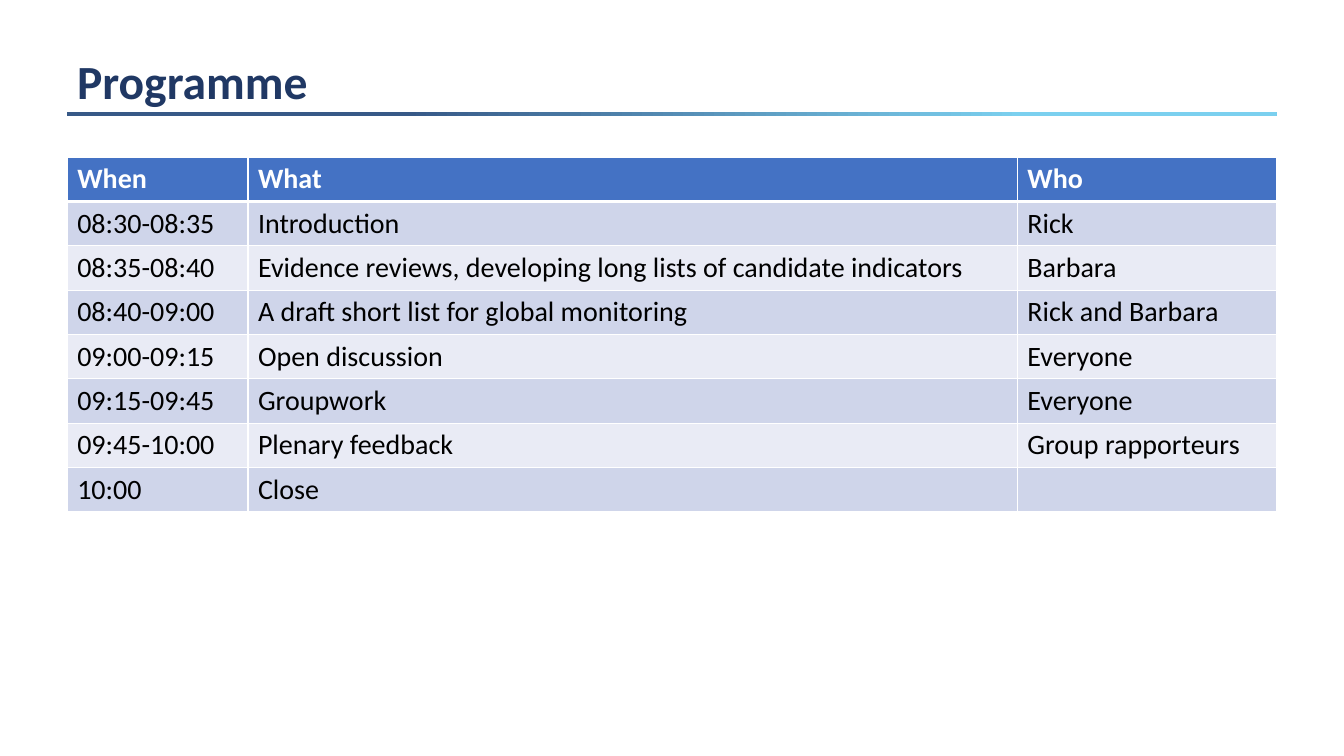
from dataclasses import dataclass

from lxml.etree import SubElement
from pptx import Presentation
from pptx.dml.color import RGBColor as Rgb
from pptx.enum.shapes import MSO_SHAPE as Preset
from pptx.enum.text import MSO_ANCHOR as Anchor
from pptx.oxml.ns import qn
from pptx.util import Inches, Pt


@dataclass(frozen=True)
class Theme:
    font: str = "Calibri"
    title_size: int = 34
    table_size: int = 20
    title: str = "203864"
    rule_start: str = "375987"
    rule_end: str = "7BD0EF"
    header: str = "4472C4"
    header_text: str = "FFFFFF"
    bands: tuple = ("CFD5EA", "E9EBF5")
    body_text: str = "000000"
    border: str = "FFFFFF"
    thin: int = 1
    thick: int = 3


class ProgrammeSlide:
    """Places elements on a grid of 20 columns by 75 rows."""

    COLUMNS, ROWS = 20, 75

    def __init__(self, deck, theme):
        self.theme = theme
        self.column = deck.slide_width / self.COLUMNS
        self.row = deck.slide_height / self.ROWS
        self.shapes = deck.slides.add_slide(deck.slide_layouts[6]).shapes

    def box(self, left, top, width, height):
        return (round(left * self.column), round(top * self.row),
                round(width * self.column), round(height * self.row))

    def add_text(self, paragraph, text, size, color, bold=False):
        run = paragraph.add_run()
        run.text = text
        run.font.name = self.theme.font
        run.font.size = Pt(size)
        run.font.bold = bold
        run.font.color.rgb = Rgb.from_string(color)

    def rule(self, *place):
        rule = self.shapes.add_shape(Preset.RECTANGLE, *self.box(*place))
        rule.shadow.inherit = False
        rule.line.fill.background()
        rule.fill.gradient()
        rule.fill.gradient_angle = 0
        stops = ((0.28, self.theme.rule_start), (0.79, self.theme.rule_end))
        for stop, (position, color) in zip(rule.fill.gradient_stops, stops):
            stop.position = position
            stop.color.rgb = Rgb.from_string(color)

    def title(self, text, *place):
        frame = self.shapes.add_textbox(*self.box(*place)).text_frame
        frame.word_wrap = True
        frame.vertical_anchor = Anchor.BOTTOM
        heading = frame.paragraphs[0]
        heading.line_spacing = 0.9
        self.add_text(heading, text, self.theme.title_size, self.theme.title, bold=True)

    def borders(self, cell, top, bottom):
        properties = cell._tc.get_or_add_tcPr()
        sides = {"L": self.theme.thin, "R": self.theme.thin, "T": top, "B": bottom}
        for side, width in sides.items():
            line = SubElement(properties, qn(f"a:ln{side}"), w=str(Pt(width)))
            fill = SubElement(line, qn("a:solidFill"))
            SubElement(fill, qn("a:srgbClr"), val=self.theme.border)

    def table(self, entries, widths, left, top, row_height):
        theme = self.theme
        place = self.box(left, top, sum(widths), row_height * len(entries))
        schedule = self.shapes.add_table(len(entries), len(widths), *place).table
        for column, width in zip(schedule.columns, widths):
            column.width = round(width * self.column)

        for index, entry in enumerate(entries):
            is_header = index == 0
            fill = theme.header if is_header else theme.bands[(index - 1) % 2]
            color = theme.header_text if is_header else theme.body_text
            # The thick line runs between the header and the first entry
            above = theme.thick if index == 1 else theme.thin
            below = theme.thick if is_header else theme.thin
            for cell, text in zip(schedule.rows[index].cells, entry):
                self.borders(cell, above, below)
                cell.fill.solid()
                cell.fill.fore_color.rgb = Rgb.from_string(fill)
                if text:
                    self.add_text(cell.text_frame.paragraphs[0], text,
                                  theme.table_size, color, bold=is_header)


PROGRAMME = [
    ("When", "What", "Who"),
    ("08:30-08:35", "Introduction", "Rick"),
    ("08:35-08:40", "Evidence reviews, developing long lists of candidate indicators",
     "Barbara"),
    ("08:40-09:00", "A draft short list for global monitoring", "Rick and Barbara"),
    ("09:00-09:15", "Open discussion", "Everyone"),
    ("09:15-09:45", "Groupwork", "Everyone"),
    ("09:45-10:00", "Plenary feedback", "Group rapporteurs"),
    ("10:00", "Close", ""),
]


def main():
    deck = Presentation()
    deck.slide_width, deck.slide_height = Inches(13.33), Inches(7.5)
    programme = ProgrammeSlide(deck, Theme())

    # Heading with its gradient rule
    programme.rule(1, 11.1, 18, 0.4)
    programme.title("Programme", 1, 2.2, 18, 9.2)

    # Timetable
    programme.table(PROGRAMME, widths=(2.69, 11.45, 3.86),
                    left=1, top=15.6, row_height=4.4)

    deck.save("out.pptx")


if __name__ == "__main__":
    main()
